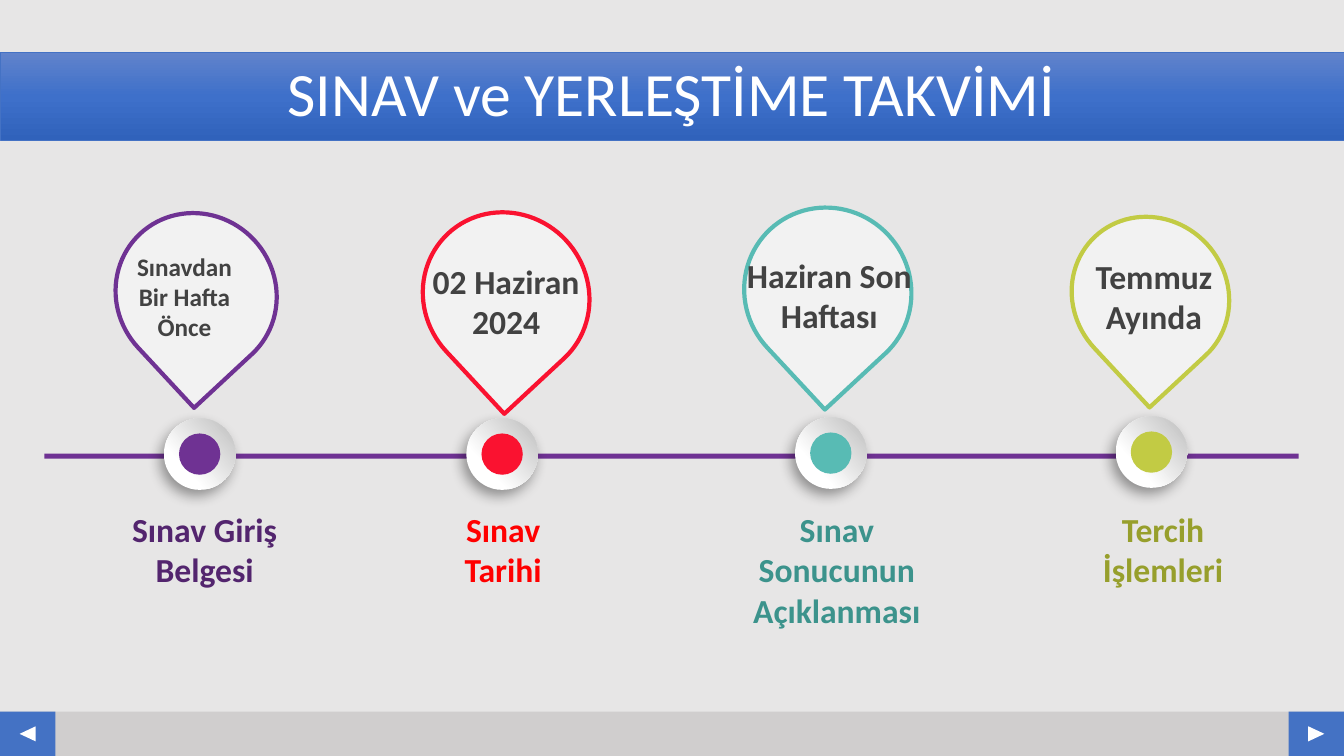
from dataclasses import dataclass

from lxml import etree
from pptx import Presentation
from pptx.dml.color import RGBColor
from pptx.enum.shapes import MSO_SHAPE
from pptx.enum.text import MSO_ANCHOR, PP_ALIGN
from pptx.oxml.ns import qn
from pptx.util import Inches, Pt

CENTER = PP_ALIGN.CENTER
TOP, MIDDLE = MSO_ANCHOR.TOP, MSO_ANCHOR.MIDDLE
RECTANGLE, OVAL = MSO_SHAPE.RECTANGLE, MSO_SHAPE.OVAL
TEARDROP, TRIANGLE = MSO_SHAPE.TEAR, MSO_SHAPE.ISOSCELES_TRIANGLE

BLUE, WHITE, PURPLE, GRAY_TEXT = "4472C4", "FFFFFF", "6F3293", "424242"
TITLE_GRADIENT = [(0, "6183CB"), (50, "3E70CA"), (100, "3062BB")]
KNOB_GRADIENT = [(29, "FFFFFF"), (98, "BFBFBF")]
KNOB_SIZE, DOT_SIZE = 0.71, 0.41
COLUMN_TOP, COLUMN_WIDTH, COLUMN_HEIGHT = 2, 2.4, 4.31


@dataclass
class Stage:
    """A stage of the calendar, with boxes relative to its column."""
    left: float
    color: str
    pin: tuple
    date: str
    date_size: int
    date_box: tuple
    knob_top: float
    caption: str
    caption_color: str
    caption_box: tuple


STAGES = [
    Stage(0.78, PURPLE, (0.38, 0.1, 1.57, 1.63), "Sınavdan Bir Hafta Önce", 18,
          (0.42, 0.44, 1.26, 1.01), 2.15, "Sınav Giriş Belgesi", "53256E", (0.3, 3, 1.9, 0.91)),
    Stage(3.78, "FA1230", (0.43, 0.09, 1.62, 1.69), "02 Haziran\n2024", 24,
          (0.4, 0.54, 1.68, 0.91), 2.15, "Sınav Tarihi", "FF0000", (0.46, 3, 1.5, 0.91)),
    Stage(7.04, "58BBB4", (0.35, 0.05, 1.64, 1.68), "Haziran Son\nHaftası", 24,
          (0.26, 0.48, 1.85, 0.91), 2.14, "Sınav Sonucunun Açıklanması", "3C938C",
          (0.18, 3, 2.16, 1.31)),
    Stage(10.22, "C2CB44", (0.43, 0.13, 1.52, 1.61), "Temmuz\nAyında", 24,
          (0.54, 0.49, 1.37, 0.91), 2.13, "Tercih İşlemleri", "979F2C", (0.54, 3, 1.55, 0.91)),
]


def color_of(value):
    """Return the colour of a hex string."""
    return RGBColor.from_string(value)


def inside(box, part):
    """Return the part's box moved by the corner of its outer box."""
    return box[0] + part[0], box[1] + part[1], part[2], part[3]


def add_shape(slide, kind, box, fill, line=None, rotation=0):
    """Add a preset shape with a plain fill and an optional (colour, width) line."""
    shape = slide.shapes.add_shape(kind, *map(Inches, box))
    shape.shadow.inherit = False
    shape.rotation = rotation
    shape.fill.solid()
    shape.fill.fore_color.rgb = color_of(fill)
    if line:
        shape.line.color.rgb = color_of(line[0])
        shape.line.width = Pt(line[1])
    else:
        shape.line.fill.background()
    return shape


def set_gradient(shape, stops, angle):
    """Fill a shape with gradient stops at a counter-clockwise angle."""
    shape.fill.gradient()
    shape.fill.gradient_angle = angle
    stop_list = shape.fill._xPr.find(".//" + qn("a:gsLst"))
    for stop in list(stop_list):
        stop_list.remove(stop)
    for position, color in stops:
        stop = etree.SubElement(stop_list, qn("a:gs"), pos=str(position * 1000))
        etree.SubElement(stop, qn("a:srgbClr"), val=color)


def add_soft_shadow(shape):
    """Give a shape a blurred shadow toward the lower left."""
    effects = shape._element.spPr.find(qn("a:effectLst"))
    shadow = etree.SubElement(effects, qn("a:outerShdw"), blurRad=str(Pt(10)),
                              dist=str(Pt(5)), dir=str(123 * 60000), rotWithShape="0")
    color = etree.SubElement(shadow, qn("a:srgbClr"), val="000000")
    etree.SubElement(color, qn("a:alpha"), val="39000")


def write_text(shape, text, size, color, bold, anchor, wrap):
    """Write centred text, one paragraph a line."""
    frame = shape.text_frame
    frame.text = text
    for name, value in {"word_wrap": wrap, "vertical_anchor": anchor}.items():
        setattr(frame, name, value)
    font_format = {"name": "Calibri", "size": Pt(size), "bold": bold}
    for paragraph in frame.paragraphs:
        paragraph.alignment = CENTER
        for run in paragraph.runs:
            run.font.color.rgb = color_of(color)
            for name, value in font_format.items():
                setattr(run.font, name, value)


def add_label(slide, box, text, size, color):
    """Add a bold label that wraps unless its lines are given."""
    label = slide.shapes.add_textbox(*map(Inches, box))
    write_text(label, text, size, color, True, TOP, "\n" not in text)


def add_title(slide, box):
    """Format the title placeholder as a gradient band."""
    title = slide.shapes.title
    for name, value in zip(("left", "top", "width", "height"), box):
        setattr(title, name, Inches(value))
    set_gradient(title, TITLE_GRADIENT, 270)
    title.line.color.rgb = color_of(BLUE)
    title.line.width = Pt(0.5)
    write_text(title, "SINAV ve YERLEŞTİME TAKVİMİ", 44, WHITE, False, MIDDLE, True)
    title.text_frame.paragraphs[0].line_spacing = 0.9


def add_footer(slide, box):
    """Add the bottom bar with a button and arrow at each end."""
    add_shape(slide, RECTANGLE, box, "D0CECE")
    button_width = 0.55
    for left, rotation in ((0, 270), (box[2] - button_width, 90)):
        add_shape(slide, RECTANGLE, inside(box, (left, 0, button_width, box[3])), BLUE)
        arrow = inside(box, (left + 0.2, 0.14, 0.15, 0.16))
        add_shape(slide, TRIANGLE, arrow, WHITE, rotation=rotation)


def add_stage(slide, box, stage):
    """Add a pin with its date, a knob on the line and a caption."""
    knob_left = (box[2] - KNOB_SIZE) / 2
    knob_box = inside(box, (knob_left, stage.knob_top, KNOB_SIZE, KNOB_SIZE))
    knob = add_shape(slide, OVAL, knob_box, WHITE)
    set_gradient(knob, KNOB_GRADIENT, 42)
    add_soft_shadow(knob)
    margin = (KNOB_SIZE - DOT_SIZE) / 2
    add_shape(slide, OVAL, inside(knob_box, (margin, margin, DOT_SIZE, DOT_SIZE)), stage.color)
    add_shape(slide, TEARDROP, inside(box, stage.pin), "F2F2F2", (stage.color, 3), 137.1)
    add_label(slide, inside(box, stage.date_box), stage.date, stage.date_size, GRAY_TEXT)
    add_label(slide, inside(box, stage.caption_box), stage.caption, 24, stage.caption_color)


def main():
    """Build and save the exam calendar."""
    presentation = Presentation()
    presentation.slide_width = Inches(13.33)
    presentation.slide_height = Inches(7.5)
    slide = presentation.slides.add_slide(presentation.slide_layouts[5])
    slide.background.fill.solid()
    slide.background.fill.fore_color.rgb = color_of("E7E6E6")
    add_footer(slide, (0, 7.06, 13.33, 0.44))
    add_title(slide, (0, 0.52, 13.33, 0.87))
    add_shape(slide, RECTANGLE, (0.44, 4.5, 12.44, 0.05), PURPLE)
    for stage in STAGES:
        add_stage(slide, (stage.left, COLUMN_TOP, COLUMN_WIDTH, COLUMN_HEIGHT), stage)
    presentation.save("out.pptx")


if __name__ == "__main__":
    main()
